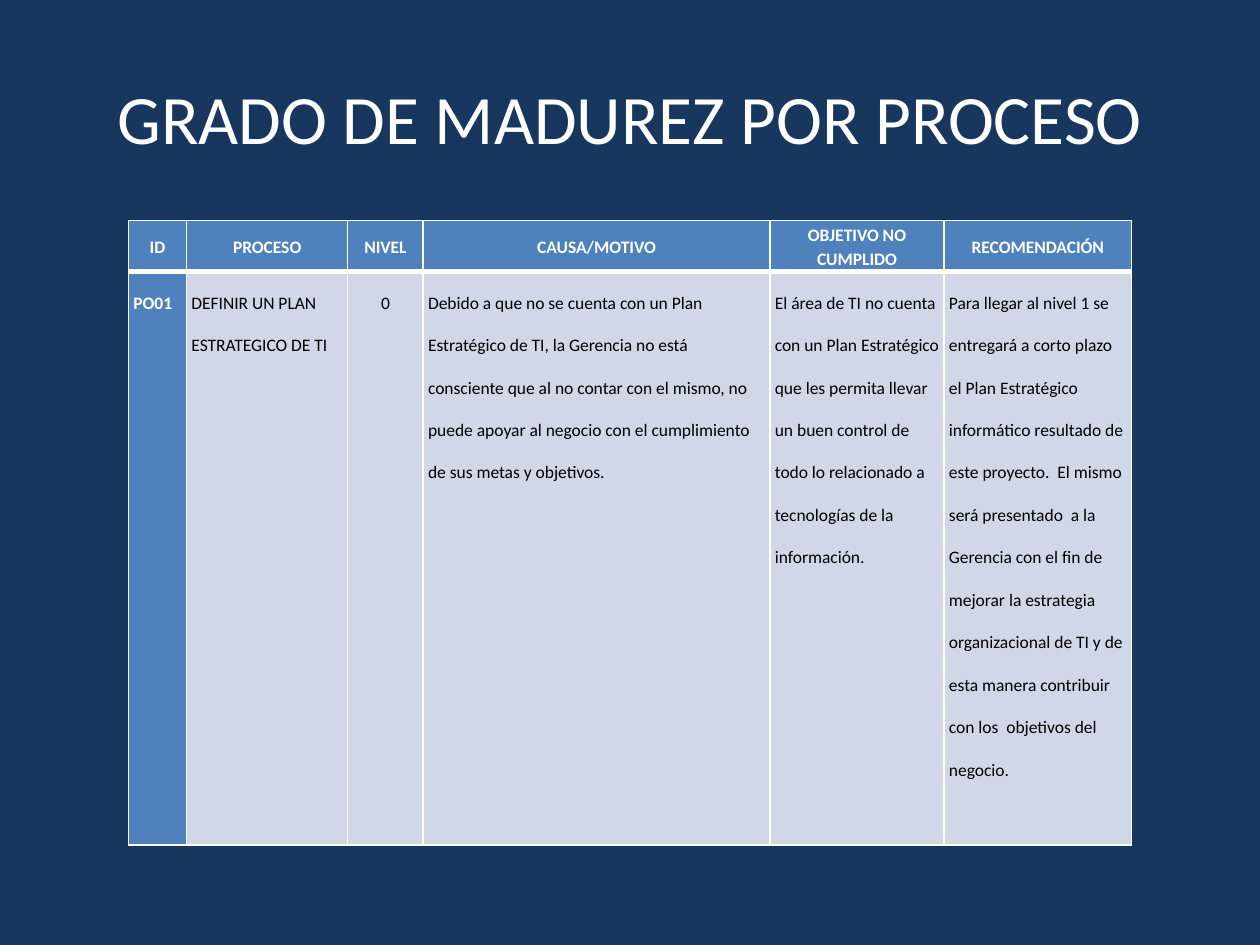
from lxml import etree
from pptx import Presentation
from pptx.dml.color import RGBColor
from pptx.enum import text
from pptx.oxml import ns
from pptx.util import Cm, Pt

NAVY = RGBColor(0x17, 0x37, 0x5E)
BLUE = RGBColor(0x4F, 0x81, 0xBD)
PALE = RGBColor(0xD0, 0xD8, 0xE8)
WHITE = RGBColor(0xFF, 0xFF, 0xFF)
BLACK = RGBColor(0, 0, 0)
FONT = "Calibri"

COLUMN_WIDTHS = [1.17, 3.25, 1.52, 6.99, 3.51, 3.78]
ROW_HEIGHTS = [1.02, 11.56]
HEADINGS = ["ID", "PROCESO", "NIVEL", "CAUSA/MOTIVO", "OBJETIVO NO\nCUMPLIDO", "RECOMENDACIÓN"]
PROCESS = [
    "PO01",
    "DEFINIR UN PLAN ESTRATEGICO DE TI",
    "0",
    "Debido a que no se cuenta con un Plan Estratégico de TI, la Gerencia no está "
    "consciente que al no contar con el mismo, no puede apoyar al negocio con el "
    "cumplimiento de sus metas y objetivos.",
    "El área de TI no cuenta con un Plan Estratégico que les permita llevar un buen "
    "control de todo lo relacionado a tecnologías de la información.",
    "Para llegar al nivel 1 se entregará a corto plazo  el Plan Estratégico informático "
    "resultado de este proyecto.  El mismo será presentado  a la Gerencia con el fin de "
    "mejorar la estrategia organizacional de TI y de esta manera contribuir con los  "
    "objetivos del negocio.",
]


def format_paragraphs(frame, size, color, bold, align, spacing=None):
    """Apply one text format to every paragraph of a frame."""
    for paragraph in frame.paragraphs:
        paragraph.alignment = align
        paragraph.line_spacing = spacing
        for run in paragraph.runs:
            run.font.name = FONT
            run.font.size = Pt(size)
            run.font.bold = bold
            run.font.color.rgb = color


def add_borders(cell, **widths):
    """Draw white cell borders with the given widths in points."""
    properties = cell._tc.get_or_add_tcPr()
    for side, width in widths.items():
        line = etree.SubElement(properties, ns.qn(f"a:ln{side}"), w=str(Pt(width)))
        fill = etree.SubElement(line, ns.qn("a:solidFill"))
        etree.SubElement(fill, ns.qn("a:srgbClr"), val=str(WHITE))


def fill_cell(cell, wording, heading, accent, centred):
    """Write and format one table cell."""
    cell.text_frame.text = wording
    cell.margin_left = cell.margin_right = Cm(0.1)
    cell.margin_top = cell.margin_bottom = 0
    cell.vertical_anchor = text.MSO_ANCHOR.MIDDLE if heading else text.MSO_ANCHOR.TOP
    add_borders(cell, L=1, R=1, T=1 if heading else 3, B=3 if heading else 1)
    cell.fill.solid()
    cell.fill.fore_color.rgb = BLUE if accent else PALE
    align = text.PP_ALIGN.CENTER if centred else text.PP_ALIGN.LEFT
    format_paragraphs(cell.text_frame, 10, WHITE if accent else BLACK, accent, align,
                      1.15 if heading else 2.0)


def add_title(slide, wording):
    """Place the slide title."""
    title = slide.shapes.title
    title.left, title.top, title.width, title.height = Cm(1.27), Cm(0.76), Cm(22.86), Cm(3.18)
    title.text_frame.text = wording
    title.text_frame.vertical_anchor = text.MSO_ANCHOR.MIDDLE
    format_paragraphs(title.text_frame, 39.6, WHITE, False, text.PP_ALIGN.CENTER)


def add_maturity_table(slide):
    """Add the table of maturity by process."""
    table = slide.shapes.add_table(
        len(ROW_HEIGHTS), len(COLUMN_WIDTHS), Cm(2.59), Cm(4.45),
        Cm(sum(COLUMN_WIDTHS)), Cm(sum(ROW_HEIGHTS))).table
    for column, width in zip(table.columns, COLUMN_WIDTHS):
        column.width = Cm(width)
    for row, height in zip(table.rows, ROW_HEIGHTS):
        row.height = Cm(height)
    level = HEADINGS.index("NIVEL")
    for r, wordings in enumerate([HEADINGS, PROCESS]):
        heading = r == 0
        for c, wording in enumerate(wordings):
            fill_cell(table.cell(r, c), wording, heading, heading or c == 0,
                      heading or c == level)


def main():
    """Build and save the slide."""
    deck = Presentation()
    deck.slide_width, deck.slide_height = Cm(25.4), Cm(19.05)
    slide = deck.slides.add_slide(deck.slide_layouts[5])
    slide.background.fill.solid()
    slide.background.fill.fore_color.rgb = NAVY
    add_title(slide, "GRADO DE MADUREZ POR PROCESO")
    add_maturity_table(slide)
    deck.save("out.pptx")


if __name__ == "__main__":
    main()
